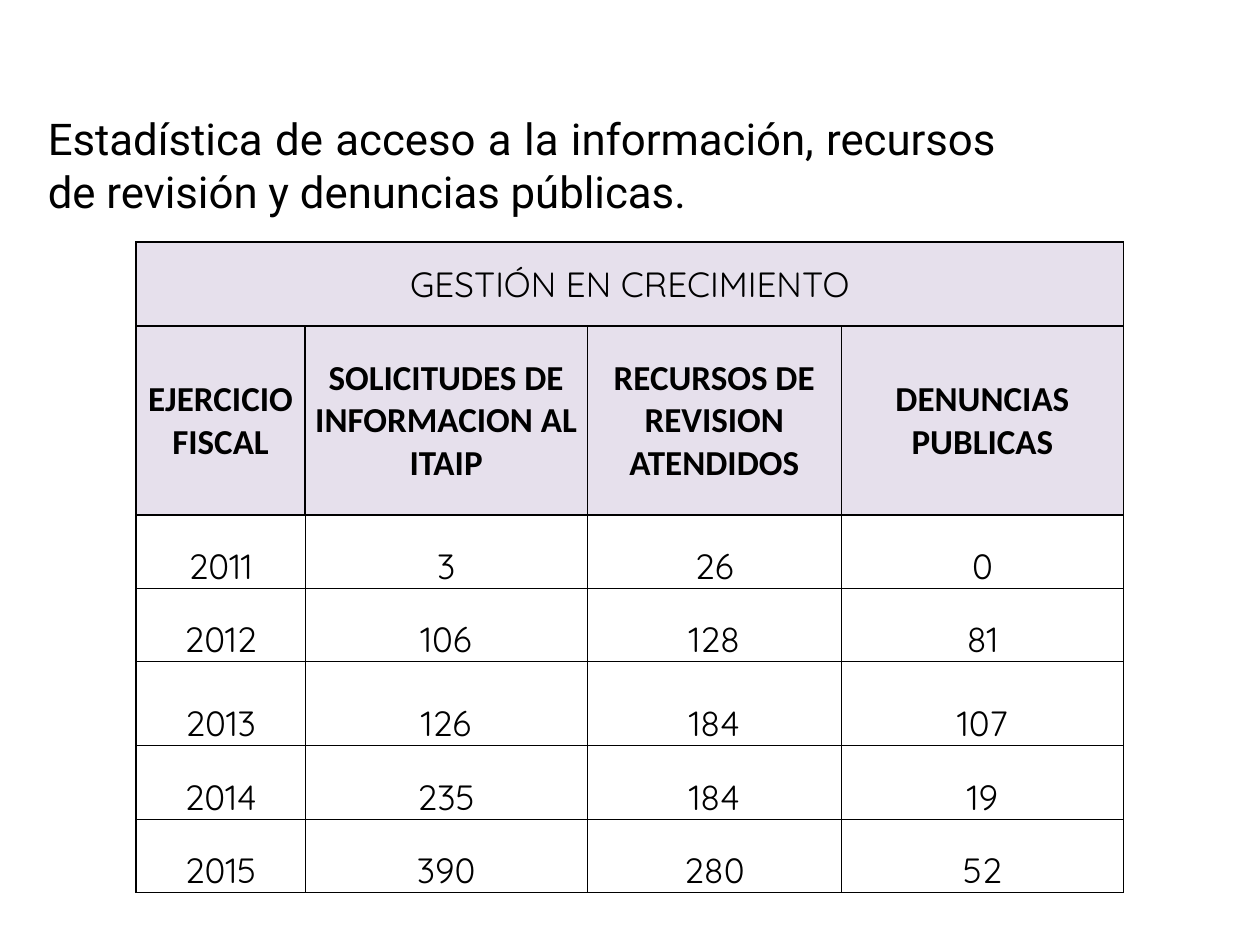
import pptx
import pptx.dml.color
import pptx.enum.text
import pptx.util
from lxml import etree
from pptx.oxml.ns import qn

Pt = pptx.util.Pt
RGBColor = pptx.dml.color.RGBColor
ALIGN = pptx.enum.text.PP_ALIGN
ANCHOR = pptx.enum.text.MSO_ANCHOR

BLACK = RGBColor(0x00, 0x00, 0x00)
WHITE = RGBColor(0xFF, 0xFF, 0xFF)
LILAC = RGBColor(0xE6, 0xE0, 0xEC)

HEADING = ("Estadística de acceso a la información, recursos "
           "de revisión y denuncias públicas.")
TABLE_TITLE = "GESTIÓN EN CRECIMIENTO"
COLUMN_HEADERS = ["EJERCICIO FISCAL", "SOLICITUDES DE INFORMACION AL ITAIP",
                  "RECURSOS DE REVISION ATENDIDOS", "DENUNCIAS PUBLICAS"]
YEARS = [
    (2011, 3, 26, 0),
    (2012, 106, 128, 81),
    (2013, 126, 184, 107),
    (2014, 235, 184, 19),
    (2015, 390, 280, 52),
]
COLUMN_WIDTHS = [96.5, 161.3, 145.2, 161.3]
ROW_HEIGHTS = [48, 108, 42, 42, 48, 42, 42]
HEADER_ROWS = 2

HEADING_FONT = {"name": "Roboto", "size": Pt(25), "bold": False}
BODY_FONT = {"name": "Quicksand", "size": Pt(20), "bold": False}
HEADER_FONT = {"name": "Calibri", "size": Pt(20), "bold": True}
CELL_MARGINS = {"margin_left": Pt(0.75), "margin_right": Pt(0.75),
                "margin_top": Pt(0.75), "margin_bottom": 0}


def set_attributes(target, values):
    for name, value in values.items():
        setattr(target, name, value)


def write(frame, text, alignment, font):
    paragraph = frame.paragraphs[0]
    paragraph.alignment = alignment
    run = paragraph.add_run()
    run.text = text
    set_attributes(run.font, font)
    run.font.color.rgb = BLACK


def add_borders(cell, widths):
    properties = cell._tc.get_or_add_tcPr()
    for side, width in widths.items():
        line = etree.SubElement(properties, qn(f"a:ln{side}"), w=str(Pt(width)))
        fill = etree.SubElement(line, qn("a:solidFill"))
        etree.SubElement(fill, qn("a:srgbClr"), val=str(BLACK))


def border_widths(row, column):
    """Header cells and the outer frame get 1 pt, inner lines 0.5 pt."""
    header = row < HEADER_ROWS
    heavy = {
        "L": header or column == 0,
        "R": header or column == len(COLUMN_WIDTHS) - 1,
        "T": row <= HEADER_ROWS,
        "B": header or row == len(ROW_HEIGHTS) - 1,
    }
    return {side: 1 if is_heavy else 0.5 for side, is_heavy in heavy.items()}


def add_heading(slide):
    box = slide.shapes.add_textbox(Pt(20.2), Pt(60.5), Pt(555.8), Pt(67.7))
    box.text_frame.word_wrap = True
    write(box.text_frame, HEADING, ALIGN.JUSTIFY, HEADING_FONT)


def add_statistics(slide):
    rows = [[TABLE_TITLE, "", "", ""], COLUMN_HEADERS, *YEARS]
    table = slide.shapes.add_table(
        len(rows), len(COLUMN_WIDTHS), Pt(77.8), Pt(138.2),
        Pt(sum(COLUMN_WIDTHS)), Pt(sum(ROW_HEIGHTS))).table
    set_attributes(table, {"first_row": False, "horz_banding": False})
    for column, width in zip(table.columns, COLUMN_WIDTHS):
        column.width = Pt(width)
    for row, height in zip(table.rows, ROW_HEIGHTS):
        row.height = Pt(height)
    table.cell(0, 0).merge(table.cell(0, len(COLUMN_WIDTHS) - 1))

    for row, values in enumerate(rows):
        header = row < HEADER_ROWS
        for column, value in enumerate(values):
            cell = table.cell(row, column)
            set_attributes(cell, CELL_MARGINS)
            cell.vertical_anchor = ANCHOR.MIDDLE if header else ANCHOR.BOTTOM
            add_borders(cell, border_widths(row, column))
            cell.fill.solid()
            cell.fill.fore_color.rgb = LILAC if header else WHITE
            if not cell.is_spanned:
                font = HEADER_FONT if row == 1 else BODY_FONT
                write(cell.text_frame, str(value), ALIGN.CENTER, font)


def main():
    presentation = pptx.Presentation()
    presentation.slide_width = Pt(720)
    presentation.slide_height = Pt(540)
    slide = presentation.slides.add_slide(presentation.slide_layouts[6])
    add_heading(slide)
    add_statistics(slide)
    presentation.save("out.pptx")


if __name__ == "__main__":
    main()
